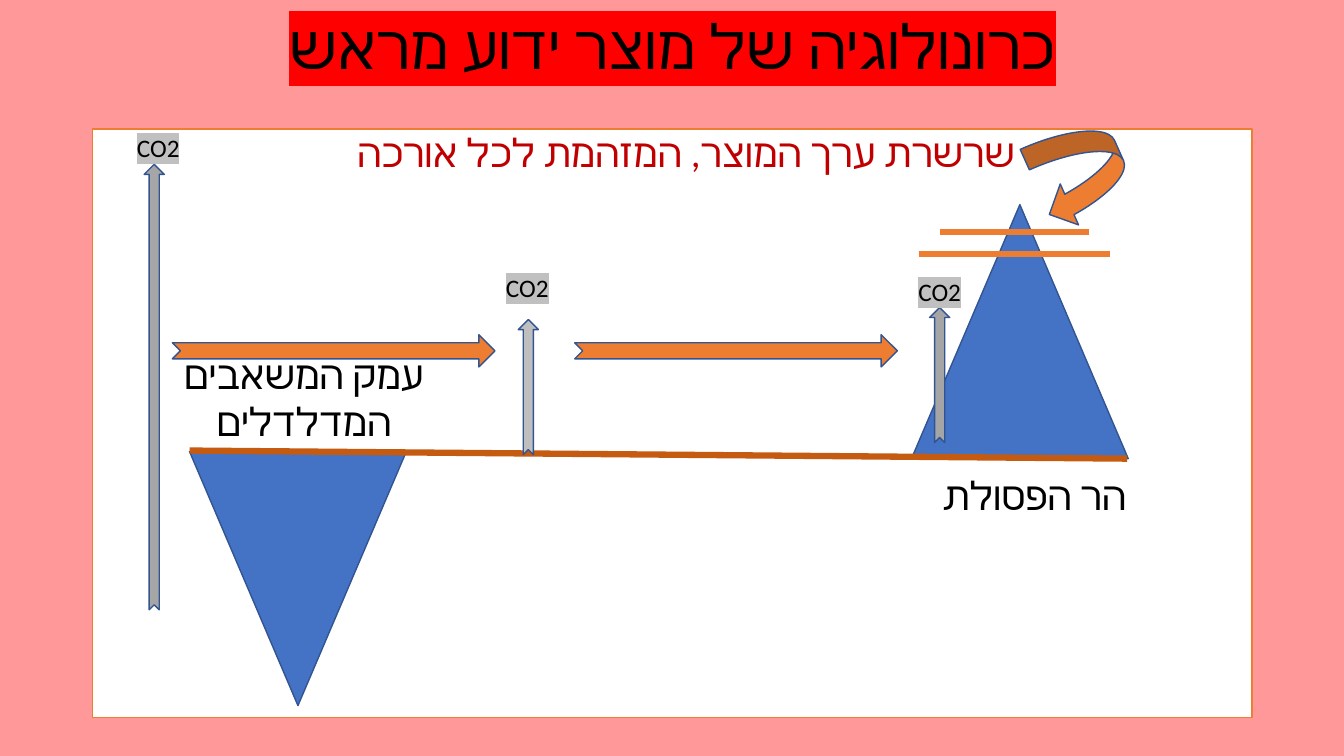
from lxml import etree
from pptx import Presentation
from pptx.dml.color import RGBColor
from pptx.enum.shapes import MSO_CONNECTOR, MSO_SHAPE
from pptx.enum.text import MSO_ANCHOR, MSO_AUTO_SIZE, PP_ALIGN
from pptx.oxml.ns import qn
from pptx.util import Inches, Pt

RECTANGLE = MSO_SHAPE.RECTANGLE
TRIANGLE = MSO_SHAPE.ISOSCELES_TRIANGLE
NOTCHED_ARROW = MSO_SHAPE.NOTCHED_RIGHT_ARROW
CURVED_ARROW = MSO_SHAPE.CURVED_LEFT_ARROW
STRAIGHT = MSO_CONNECTOR.STRAIGHT
TOP, MIDDLE = MSO_ANCHOR.TOP, MSO_ANCHOR.MIDDLE
NO_FIT, GROW = MSO_AUTO_SIZE.NONE, MSO_AUTO_SIZE.SHAPE_TO_FIT_TEXT
LEFT, CENTER = PP_ALIGN.LEFT, PP_ALIGN.CENTER
TITLE_ONLY = 5

BLACK, WHITE, PINK, RED = "000000", "FFFFFF", "FF9999", "FF0000"
BLUE, NAVY, ORANGE, BROWN = "4472C4", "325491", "ED7D31", "C55A11"
DARK_RED, SILVER = "C00000", "C0C0C0"


def color(value):
    return RGBColor.from_string(value)


class SlideBuilder:
    font = "Calibri"
    outline_width = 1
    rule_width = 4.5

    def __init__(self, presentation, background):
        self.slide = presentation.slides.add_slide(presentation.slide_layouts[TITLE_ONLY])
        fill = self.slide.background.fill
        fill.solid()
        fill.fore_color.rgb = color(background)

    def set_text(self, text_frame, text, size, text_color=BLACK, align=CENTER, highlight=None, spacing=None):
        text_frame.text = text
        paragraph = text_frame.paragraphs[0]
        paragraph.alignment = align
        paragraph.line_spacing = spacing
        run = paragraph.runs[0]
        run.font.size = Pt(size)
        run.font.name = self.font
        run.font.color.rgb = color(text_color)
        properties = run._r.get_or_add_rPr()
        complex_font = etree.SubElement(properties, qn("a:cs"))
        complex_font.set("typeface", self.font)
        if highlight:
            mark = etree.Element(qn("a:highlight"))
            etree.SubElement(mark, qn("a:srgbClr")).set("val", highlight)
            properties.find(qn("a:solidFill")).addnext(mark)
        return paragraph

    def title(self, text, left, top, width, height):
        shape = self.slide.shapes.title
        shape.left, shape.top = Inches(left), Inches(top)
        shape.width, shape.height = Inches(width), Inches(height)
        frame = shape.text_frame
        frame.word_wrap = True
        frame.auto_size = NO_FIT
        frame.vertical_anchor = MIDDLE
        paragraph = self.set_text(frame, text, 44, highlight=RED, spacing=0.9)
        paragraph._p.get_or_add_pPr().set("rtl", "1")

    def shape(self, kind, left, top, width, height, fill, line=NAVY, rotation=0):
        shape = self.slide.shapes.add_shape(
            kind, Inches(left), Inches(top), Inches(width), Inches(height))
        shape.shadow.inherit = False
        shape.fill.solid()
        shape.fill.fore_color.rgb = color(fill)
        shape.line.color.rgb = color(line)
        shape.line.width = Pt(self.outline_width)
        shape.rotation = rotation
        return shape

    def panel(self, text, left, top, width, height):
        frame = self.shape(RECTANGLE, left, top, width, height, WHITE, ORANGE).text_frame
        frame.word_wrap = True
        frame.vertical_anchor = TOP
        frame.margin_left = Inches(0.37)
        self.set_text(frame, text, 28, DARK_RED, spacing=0.9)

    def label(self, text, left, top, width, height, size=28, wrap=True, **style):
        box = self.slide.shapes.add_textbox(
            Inches(left), Inches(top), Inches(width), Inches(height))
        frame = box.text_frame
        frame.word_wrap = wrap
        frame.auto_size = GROW
        self.set_text(frame, text, size, **style)

    def rule(self, start_x, start_y, end_x, end_y, line):
        connector = self.slide.shapes.add_connector(
            STRAIGHT, Inches(start_x), Inches(start_y), Inches(end_x), Inches(end_y))
        connector.line.color.rgb = color(line)
        connector.line.width = Pt(self.rule_width)
        etree.SubElement(connector._element.spPr, qn("a:effectLst"))


def main():
    presentation = Presentation()
    presentation.slide_width = Inches(13.33)
    presentation.slide_height = Inches(7.5)
    builder = SlideBuilder(presentation, PINK)

    builder.title("כרונולוגיה של מוצר ידוע מראש", 0.92, 0.08, 11.5, 0.82)
    builder.panel("שרשרת ערך המוצר, המזהמת לכל אורכה", 0.92, 1.28, 11.5, 5.84)

    for left, top, rotation in ((9.04, 2.03, 0), (1.88, 4.48, 180)):
        builder.shape(TRIANGLE, left, top, 2.15, 2.52, BLUE, rotation=rotation)
    builder.rule(1.88, 4.47, 11.18, 4.55, BROWN)
    builder.label("עמק המשאבים המדלדלים", 1.63, 3.43, 2.77, 1.04)
    builder.label("הר הפסולת", 9.08, 4.63, 2.36, 0.57)

    for left in (1.71, 5.7):
        builder.shape(NOTCHED_ARROW, left, 3.32, 3.2, 0.32, ORANGE)
    builder.shape(CURVED_ARROW, 10.27, 1.26, 0.89, 0.93, ORANGE, rotation=335.9)
    for start_x, end_x, y in ((9.32, 10.8, 2.3), (9.11, 11.01, 2.52)):
        builder.rule(start_x, y, end_x, y, ORANGE)

    emissions = (
        (-0.68, 3.74, 4.42, "A6A6A6", 1.26, 1.26),
        (4.57, 3.74, 1.34, "BFBFBF", 4.92, 2.65),
        (8.65, 3.62, 1.34, "A5A5A5", 9.01, 2.69),
    )
    for left, top, length, fill, label_left, label_top in emissions:
        builder.shape(NOTCHED_ARROW, left, top, length, 0.2, fill, rotation=270)
        builder.label("CO2", label_left, label_top, 0.63, 0.4, size=18, wrap=False,
                      align=LEFT, highlight=SILVER)

    presentation.save("out.pptx")


if __name__ == "__main__":
    main()
